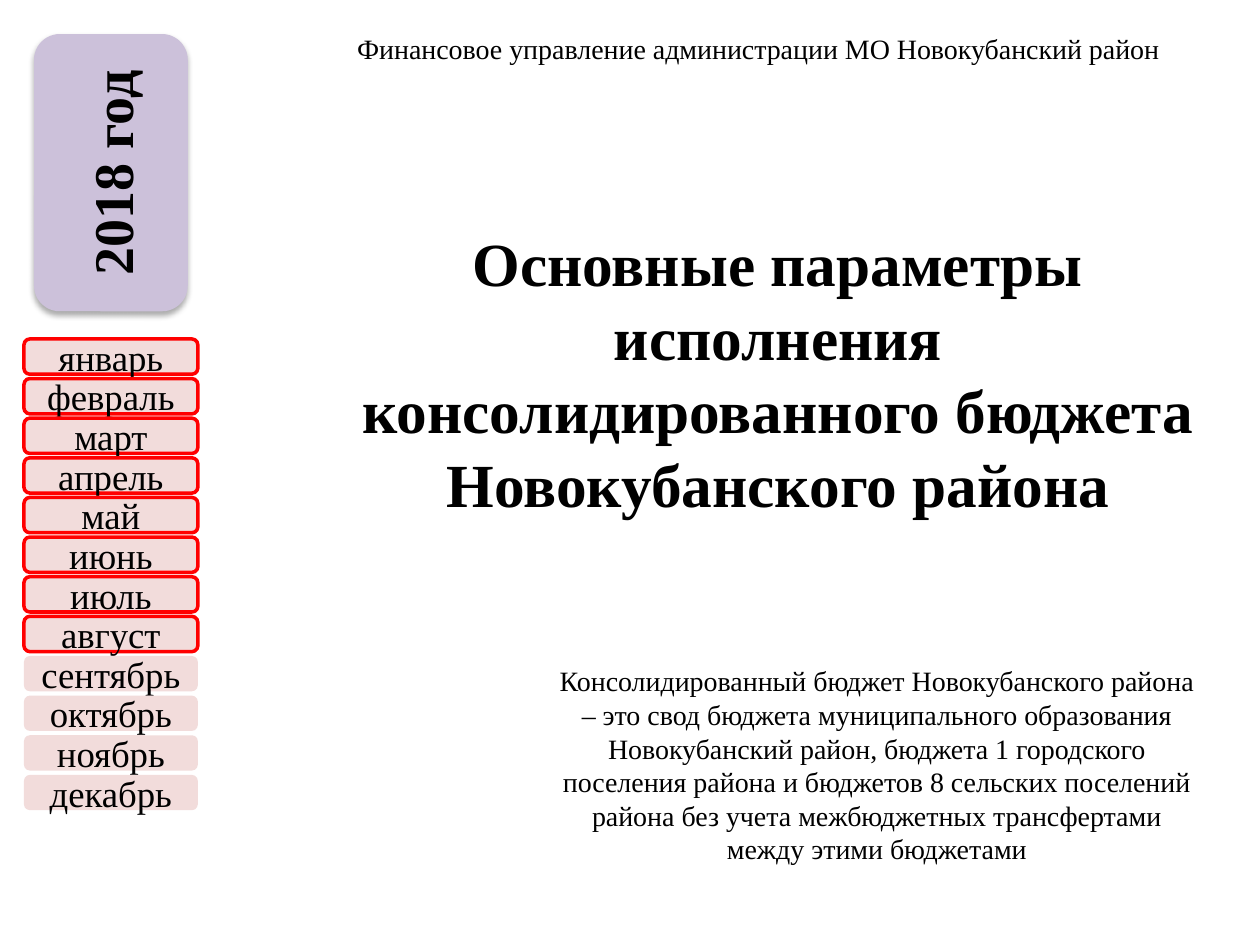
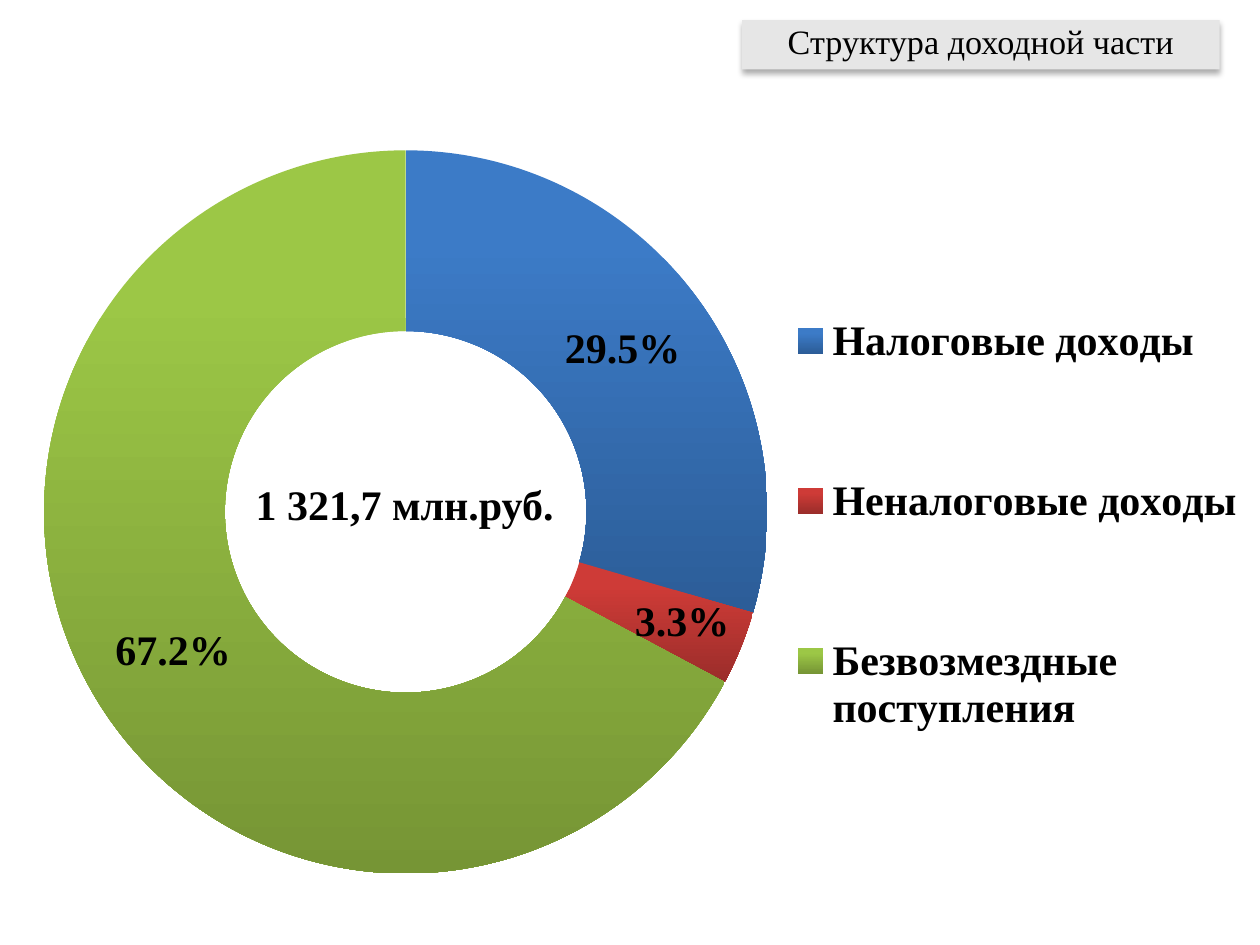
from lxml import etree
from pptx import Presentation
from pptx.chart.data import CategoryChartData
from pptx.dml.color import RGBColor
from pptx.enum.chart import XL_CHART_TYPE, XL_LEGEND_POSITION
from pptx.enum.shapes import MSO_SHAPE
from pptx.enum.text import MSO_ANCHOR, PP_ALIGN
from pptx.oxml import parse_xml
from pptx.oxml.ns import nsdecls, qn
from pptx.util import Inches, Pt

BLACK = RGBColor(0x00, 0x00, 0x00)
RED = RGBColor(0xFF, 0x00, 0x00)
PINK = RGBColor(0xF2, 0xDC, 0xDB)
LILAC = RGBColor(0xCC, 0xC1, 0xDA)
GREY = RGBColor(0xE6, 0xE6, 0xE6)
# Light top and dark bottom of each chart sector
SECTORS = [
    (RGBColor(0x3C, 0x7B, 0xC7), RGBColor(0x2C, 0x5D, 0x98)),
    (RGBColor(0xCE, 0x3B, 0x37), RGBColor(0x9B, 0x2D, 0x2A)),
    (RGBColor(0x9C, 0xC7, 0x46), RGBColor(0x76, 0x95, 0x35)),
]

MONTHS = ["январь", "февраль", "март", "апрель", "май", "июнь", "июль",
          "август", "сентябрь", "октябрь", "ноябрь", "декабрь"]
REPORTED_MONTHS = 8


def layout_xml(target=None, **fractions):
    """Manual chart layout; fractions are x, y, w, h of the chart area."""
    parts = f'<c:layoutTarget val="{target}"/>' if target else ""
    if "w" in fractions:
        parts += '<c:xMode val="edge"/><c:yMode val="edge"/>'
    parts += "".join(f'<c:{k} val="{v}"/>' for k, v in fractions.items())
    return parse_xml(f'<c:layout {nsdecls("c")}><c:manualLayout>{parts}'
                     '</c:manualLayout></c:layout>')


def set_layout(element, index, layout):
    for old in element.findall(qn("c:layout")):
        element.remove(old)
    element.insert(index, layout)


class Deck:
    font = "Times New Roman"

    def __init__(self):
        self.prs = Presentation()
        self.prs.slide_width, self.prs.slide_height = Inches(10), Inches(7.5)
        self.s = None

    def new_slide(self):
        self.s = self.prs.slides.add_slide(self.prs.slide_layouts[6])

    def set_font(self, font, size, bold):
        font.name, font.size, font.bold = self.font, Pt(size), bold
        font.color.rgb = BLACK

    def add_words(self, sp, words, size, bold=False, align=PP_ALIGN.CENTER,
                  anchor=MSO_ANCHOR.TOP, spacing=None):
        tf = sp.text_frame
        tf.word_wrap = True
        tf.vertical_anchor = anchor
        p = tf.paragraphs[0]
        p.alignment = align
        p.line_spacing = spacing
        r = p.add_run()
        r.text = words
        self.set_font(r.font, size, bold)

    def text(self, box, words, size, **style):
        sp = self.s.shapes.add_textbox(*map(Inches, box))
        self.add_words(sp, words, size, **style)

    def panel(self, box, words, size, fill, shape=MSO_SHAPE.ROUNDED_RECTANGLE,
              line=None, rotation=0, shadow=False, **style):
        sp = self.s.shapes.add_shape(shape, *map(Inches, box))
        sp.rotation = rotation
        sp.fill.solid()
        sp.fill.fore_color.rgb = fill
        if line is None:
            sp.line.fill.background()
        else:
            sp.line.color.rgb = line
            sp.line.width = Pt(2)
        sp.shadow.inherit = False
        if shadow:
            self.drop_shadow(sp)
        self.add_words(sp, words, size, anchor=MSO_ANCHOR.MIDDLE, **style)

    def drop_shadow(self, sp):
        effects = sp._element.spPr.find(qn("a:effectLst"))
        shade = etree.SubElement(effects, qn("a:outerShdw"), blurRad=str(Pt(3.5)),
                                 dist=str(Pt(2.2)), dir="5400000", rotWithShape="0")
        color = etree.SubElement(shade, qn("a:srgbClr"), val=str(BLACK))
        etree.SubElement(color, qn("a:alpha"), val="32000")

    def doughnut(self, box, values, number_format):
        data = CategoryChartData()
        data.categories = list(values)
        data.add_series("Series 1", list(values.values()))
        chart = self.s.shapes.add_chart(
            XL_CHART_TYPE.DOUGHNUT, *map(Inches, box), data).chart
        chart.has_title = False
        self.set_font(chart.font, 24, True)
        plot_area = chart._chartSpace.chart.plotArea
        set_layout(plot_area, 0,
                   layout_xml("inner", x=0.035, y=0.05, w=0.574, h=0.865))

        # Legend
        chart.has_legend = True
        chart.legend.position = XL_LEGEND_POSITION.RIGHT
        chart.legend.include_in_layout = False
        set_layout(chart.legend._element, 1,
                   layout_xml(x=0.62, y=0.115, w=0.375, h=0.765))

        # Sectors
        series = chart.plots[0].series[0]
        for i, shades in enumerate(SECTORS):
            fill = series.points[i].format.fill
            fill.gradient()
            fill.gradient_angle = 270
            for stop, color, position in zip(fill.gradient_stops, shades, (0.2, 1)):
                stop.color.rgb = color
                stop.position = position

        # Percent labels, the one of the thin sector moved outwards
        labels = series.data_labels
        labels.show_percentage = True
        labels.show_value = False
        labels.number_format = number_format
        labels.number_format_is_linked = False
        self.set_font(labels.font, 24, True)
        flags = "".join(
            f'<c:show{name} val="{int(name == "Percent")}"/>' for name in
            ("LegendKey", "Val", "CatName", "SerName", "Percent", "BubbleSize"))
        moved = parse_xml(f'<c:dLbl {nsdecls("c")}><c:idx val="1"/>'
                          f'<c:numFmt formatCode="{number_format}" sourceLinked="0"/>'
                          f'{flags}</c:dLbl>')
        set_layout(moved, 1, layout_xml(x=0.02, y=0.01))
        labels._element.insert(0, moved)


def title_slide(deck):
    deck.new_slide()
    deck.text((2.56, 0.2, 6.92, 0.36),
              "Финансовое управление администрации МО Новокубанский район", 16,
              anchor=MSO_ANCHOR.MIDDLE)
    deck.text((2.7, 1.74, 6.95, 2.46),
              "Основные параметры исполнения консолидированного бюджета "
              "Новокубанского района", 35, bold=True)
    deck.text((4.28, 5.22, 5.36, 1.72),
              "Консолидированный бюджет Новокубанского района – это свод бюджета "
              "муниципального образования Новокубанский район, бюджета 1 городского "
              "поселения района и бюджетов 8 сельских поселений района без учета "
              "межбюджетных трансфертами между этими бюджетами", 16)

    # Year and months, reported months outlined
    deck.panel((-0.22, 0.76, 2.2, 1.22), "2018 год", 32, LILAC,
               rotation=270, shadow=True, bold=True)
    step = (6.15 - 2.69) / (len(MONTHS) - 1)
    for i, month in enumerate(MONTHS):
        deck.panel((0.19, 2.69 + i * step, 1.38, 0.28), month, 21, PINK,
                   line=RED if i < REPORTED_MONTHS else None)


def income_slide(deck):
    deck.new_slide()
    deck.panel((5.89, 0.16, 3.79, 0.39), "Структура доходной части", 19.5, GREY,
               shape=MSO_SHAPE.RECTANGLE, shadow=True, spacing=0.8)
    deck.text((1.93, 3.75, 2.99, 0.5), "1 321,7 млн.руб.", 24, bold=True,
              align=PP_ALIGN.LEFT)
    deck.doughnut((0, 0.86, 10, 6.64),
                  {"Налоговые доходы": 29.5, "Неналоговые доходы": 3.3,
                   "Безвозмездные поступления": 67.2}, "0.0%")


def main():
    deck = Deck()
    title_slide(deck)
    income_slide(deck)
    deck.prs.save("out.pptx")


if __name__ == "__main__":
    main()
